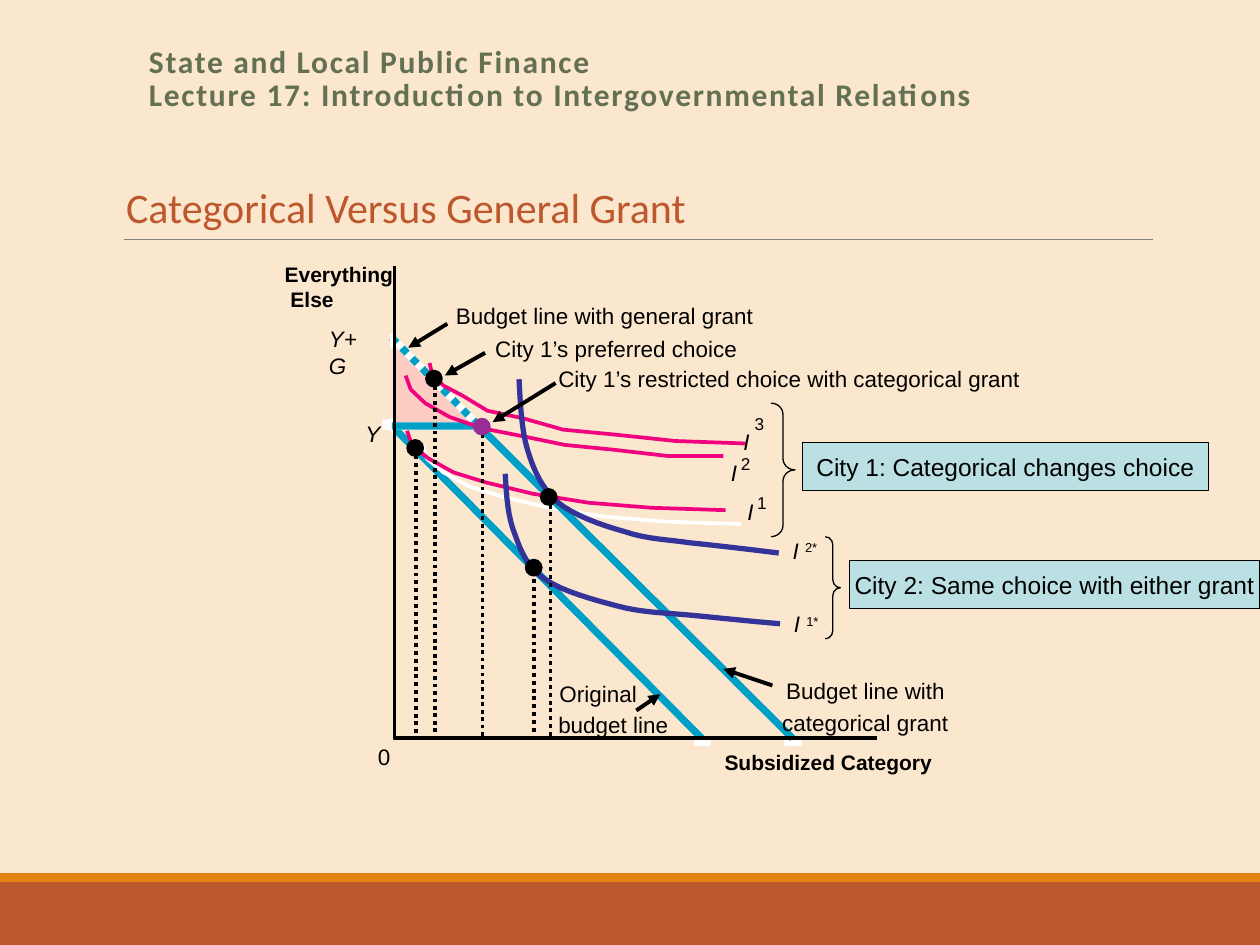
from lxml import etree
from pptx import Presentation
from pptx.dml.color import RGBColor
from pptx.enum.dml import MSO_LINE
from pptx.enum.shapes import MSO_CONNECTOR, MSO_SHAPE
from pptx.enum.text import MSO_ANCHOR, PP_ALIGN
from pptx.oxml.ns import qn
from pptx.util import Pt

RECTANGLE, OVAL, BRACE = MSO_SHAPE.RECTANGLE, MSO_SHAPE.OVAL, MSO_SHAPE.RIGHT_BRACE
STRAIGHT = MSO_CONNECTOR.STRAIGHT
DOTTED = MSO_LINE.ROUND_DOT  # written as sysDot
MIDDLE, CENTER = MSO_ANCHOR.MIDDLE, PP_ALIGN.CENTER
COLORS = {name: RGBColor.from_string(value) for name, value in {
    "cream": "FBE6CE", "rust": "BD582C", "orange": "E48312", "gray": "808080",
    "olive": "637052", "black": "000000", "white": "FFFFFF", "pink": "FDCDC3",
    "cyan": "00A0C6", "magenta": "F0027F", "purple": "982E93",
    "navy": "333399", "pale blue": "BBE0E3"}.items()}

deck = Presentation()
deck.slide_width, deck.slide_height = Pt(720), Pt(540)
page = deck.slides.add_slide(deck.slide_layouts[6])
page.background.fill.solid()
page.background.fill.fore_color.rgb = COLORS["cream"]


def add_line(start, end, color, width, dash=None, arrow=False):
    line = page.shapes.add_connector(STRAIGHT, *map(Pt, start + end))
    line.line.color.rgb = COLORS[color]
    line.line.width = Pt(width)
    if dash:
        line.line.dash_style = dash
    if arrow:
        etree.SubElement(line.line._get_or_add_ln(), qn("a:tailEnd"), type="triangle")
    etree.SubElement(line._element.spPr, qn("a:effectLst"))


def paint(shape, fill=None, line=None, width=0):
    shape.shadow.inherit = False
    if fill:
        shape.fill.solid()
        shape.fill.fore_color.rgb = COLORS[fill]
    else:
        shape.fill.background()
    if line:
        shape.line.color.rgb = COLORS[line]
        shape.line.width = Pt(width)
    else:
        shape.line.fill.background()


# Footer bands and the rule under the heading
for top, height, color in [(504, 36, "rust"), (499, 5, "orange")]:
    paint(page.shapes.add_shape(RECTANGLE, 0, Pt(top), Pt(720), Pt(height)), color)
add_line((70.6, 136.8), (658.8, 136.8), "gray", 0.5)

# Lecture title and heading
for left, top, width, height, text, size, color in [
        (78, 24, 594, 47, "State and Local Public Finance\v"
         "Lecture 17: Introduction to Intergovernmental Relations", 18, "olive"),
        (65, 100, 338, 36, "Categorical Versus General Grant", 24, "rust")]:
    box = page.shapes.add_textbox(Pt(left), Pt(top), Pt(width), Pt(height))
    box.text_frame.word_wrap = color == "olive"
    para = box.text_frame.paragraphs[0]
    para.text = text
    para.font.name, para.font.size = "Calibri", Pt(size)
    para.font.color.rgb = COLORS[color]
    if color == "olive":
        para.line_spacing = 0.85
        para.font.bold = True
        for span in para.runs:
            span._r.get_or_add_rPr().set("spc", "100")

# Region gained from the general grant, then the budget lines
region = page.shapes.build_freeform(Pt(225.4), Pt(244.8), 1)
region.add_line_segments([(Pt(275.8), Pt(244.8)), (Pt(225.4), Pt(195.8))], close=True)
paint(region.convert_to_shape(), "pink")
for start, end, dash in [((223.9, 193), (273.6, 243.4), DOTTED),
                         ((222.5, 241.9), (401, 421.9), None)]:
    add_line(start, end, "white", 4.13)
    add_line(start, end, "cyan", 4.13, dash)

# Indifference curves: city 1 as polylines, city 2 as cubic splines
city1_first = [(232.6, 246.2), (235.4, 254.2), (244.8, 262), (259.2, 270), (278, 275.8),
               (304.6, 282.2), (336.2, 287.3), (372.2, 290.2), (414.7, 291.6)]
city1_second = [(231.8, 214.6), (234.7, 222.5), (243, 230.4), (257, 238.3), (275.8, 244.8),
                (297.4, 249), (322.6, 254.2), (350.6, 257), (382, 260.6), (413.3, 260.6)]
city1_third = [(245.5, 207.4), (247, 214), (253.4, 220.3), (264.2, 226), (278.6, 234.7),
               (298.8, 239), (321.8, 245.5), (352, 248.4), (386, 252), (426, 253.4)]
city1_shadow = [(x + 8.6, y + 7.9) for x, y in city1_first]
kinked_budget = [(452.9, 421.9), (273.6, 243.4), (223.9, 243.4)]
curves = [(city1_shadow, "white", 2.13), (city1_third, "magenta", 2.13),
          (kinked_budget, "white", 4.13), (kinked_budget, "cyan", 4.13),
          (city1_first, "magenta", 2.13), (city1_second, "magenta", 2.13)]
city2_splines = [
    [(288.7, 270.7), (289.4, 283.7), (290.2, 296), (294.5, 306), (298, 316), (301.7, 324.7),
     (311.8, 331.2), (321, 337.7), (339, 342.7), (352.8, 346.3), (366.5, 350), (378, 350),
     (393, 351.4), (409, 352.8), (427.7, 355), (445.7, 356.4)],
    [(296.6, 216.7), (297.4, 231), (298, 246.2), (301.7, 257.8), (305.3, 269.3),
     (309.6, 278.6), (318.2, 286.6), (327.6, 294.5), (344, 300.2), (357, 303.8),
     (370, 308.2), (381, 308.2), (395.3, 310.3), (410.4, 311.8), (427.7, 313.9), (445, 316)]]
STEPS = 8
for controls in city2_splines:
    points = [controls[0]]
    for first in range(0, len(controls) - 1, 3):
        for step in range(1, STEPS + 1):
            t = step / STEPS
            weights = ((1 - t) ** 3, 3 * t * (1 - t) ** 2, 3 * t * t * (1 - t), t ** 3)
            points.append(tuple(sum(weight * value for weight, value in zip(weights, axis))
                                for axis in zip(*controls[first:first + 4])))
    curves.append((points, "navy", 3))
axes = [(501, 421.9), (225.4, 421.9), (225.4, 152)]

# White ticks sit beneath the axes
for left, top, width, height in [(397.4, 422, 8, 3), (449.3, 422, 8, 3), (224, 239.8, 1.4, 6.5),
                                 (224, 191.5, 1.4, 6.5), (219.6, 240.5, 4.3, 4.3)]:
    tick = page.shapes.add_shape(RECTANGLE, Pt(left), Pt(top), Pt(width), Pt(height))
    paint(tick, "white", "white", 2.13)
for points, color, width in curves + [(axes, "black", 2.13)]:
    outline = page.shapes.build_freeform(*map(Pt, points[0]), 1)
    outline.add_line_segments([(Pt(x), Pt(y)) for x, y in points[1:]], close=False)
    paint(outline.convert_to_shape(), None, color, width)

# Drop lines and choice points
for x, top, bottom, width in [(275.8, 247.7, 420.5, 2.13), (305.3, 329, 422.6, 2.25),
                              (314.6, 280.8, 420.5, 2.25), (237.6, 259.2, 419, 2.25),
                              (248.4, 218.9, 418.3, 2.13)]:
    add_line((x, bottom), (x, top), "black", width, DOTTED)
for left, top, color in [(244, 212.4, "black"), (233.3, 252, "black"), (271.4, 239.8, "purple"),
                         (301, 320.4, "black"), (309.6, 280, "black")]:
    paint(page.shapes.add_shape(OVAL, Pt(left), Pt(top), Pt(8), Pt(8)), color, color, 2.13)

# Arrows from labels
for start, end in [((255.6, 185), (233.3, 198.7)), ((441.4, 391.7), (413.3, 382.3)),
                   ((363.6, 406), (377.3, 396.7)), ((277.2, 201.6), (254.2, 214.6)),
                   ((317.5, 218.9), (281.5, 241.2))]:
    add_line(start, end, "black", 2.25, arrow=True)

# Braces and city conclusions
for left, top, width, height, bend in [(440.6, 230.4, 13.7, 76.3, 0.47),
                                       (471.6, 306.7, 8.6, 58.3, 0.54)]:
    brace = page.shapes.add_shape(BRACE, Pt(left), Pt(top), Pt(width), Pt(height))
    brace.adjustments[0] = bend
    paint(brace, None, "black", 0.75)
for left, top, width, text in [(458.6, 252.7, 232, "City 1: Categorical changes choice"),
                               (485.3, 320.4, 234.7, "City 2: Same choice with either grant")]:
    box = page.shapes.add_shape(RECTANGLE, Pt(left), Pt(top), Pt(width), Pt(27.4))
    paint(box, "pale blue", "black", 0.75)
    box.text_frame.word_wrap = False
    box.text_frame.vertical_anchor = MIDDLE
    para = box.text_frame.paragraphs[0]
    para.text, para.alignment = text, CENTER
    para.font.name, para.font.size = "Arial", Pt(14)
    para.font.color.rgb = COLORS["black"]

# Labels: left, top, width, text, size, style; "^" starts a superscript
for left, top, width, text, size, style in [
        (162.7, 149.2, 62.6, "Everything\n Else", 12, "bold"),
        (414, 428.4, 123, "Subsidized Category", 12, "bold"),
        (188, 186, 26, "Y+G", 12.8, "italic"),
        (208.8, 240, 8.6, "Y", 12.8, "italic"),
        (216, 424.4, 7.2, "0", 12.8, ""),
        (260.6, 172.4, 170.6, "Budget line with general grant", 12.8, ""),
        (283, 191.5, 139, "City 1’s preferred choice", 12.8, ""),
        (319, 208.8, 265, "City 1’s restricted choice with categorical grant", 12.8, ""),
        (449.3, 387, 91.4, "Budget line with", 12.8, ""),
        (447, 405, 95.8, "categorical grant", 12.8, ""),
        (319.7, 388.4, 44.6, "Original", 12.8, ""),
        (319, 406.4, 63.4, "budget line", 12.8, ""),
        (427, 284.7, 3.6, "I", 12.8, "italic"), (432.7, 281.3, 5.5, "1", 9.8, ""),
        (417.6, 262.4, 3.6, "I", 12.8, "italic"), (423.4, 259, 5.5, "2", 9.8, ""),
        (424.8, 244.4, 3.6, "I", 12.8, "italic"), (431.3, 236, 5.5, "3", 9.8, ""),
        (453.6, 348.8, 15, "I ^1*", 12.8, "italic"), (452.9, 307, 15, "I ^2*", 12.8, "italic")]:
    lines = text.split("\n")
    box = page.shapes.add_textbox(Pt(left), Pt(top), Pt(width), Pt(1.15 * size * len(lines)))
    frame = box.text_frame
    frame.margin_left = frame.margin_top = frame.margin_right = frame.margin_bottom = 0
    frame.word_wrap = False
    base, _, raised = text.partition("^")
    frame.text = base
    for para in frame.paragraphs:
        para.font.name, para.font.size = "Arial", Pt(size)
        para.font.color.rgb = COLORS["black"]
        para.font.bold, para.font.italic = style == "bold", style == "italic"
    if raised:
        span = frame.paragraphs[0].add_run()
        span.text, span.font.italic = raised, False
        span._r.get_or_add_rPr().set("baseline", "30000")

deck.save("out.pptx")
